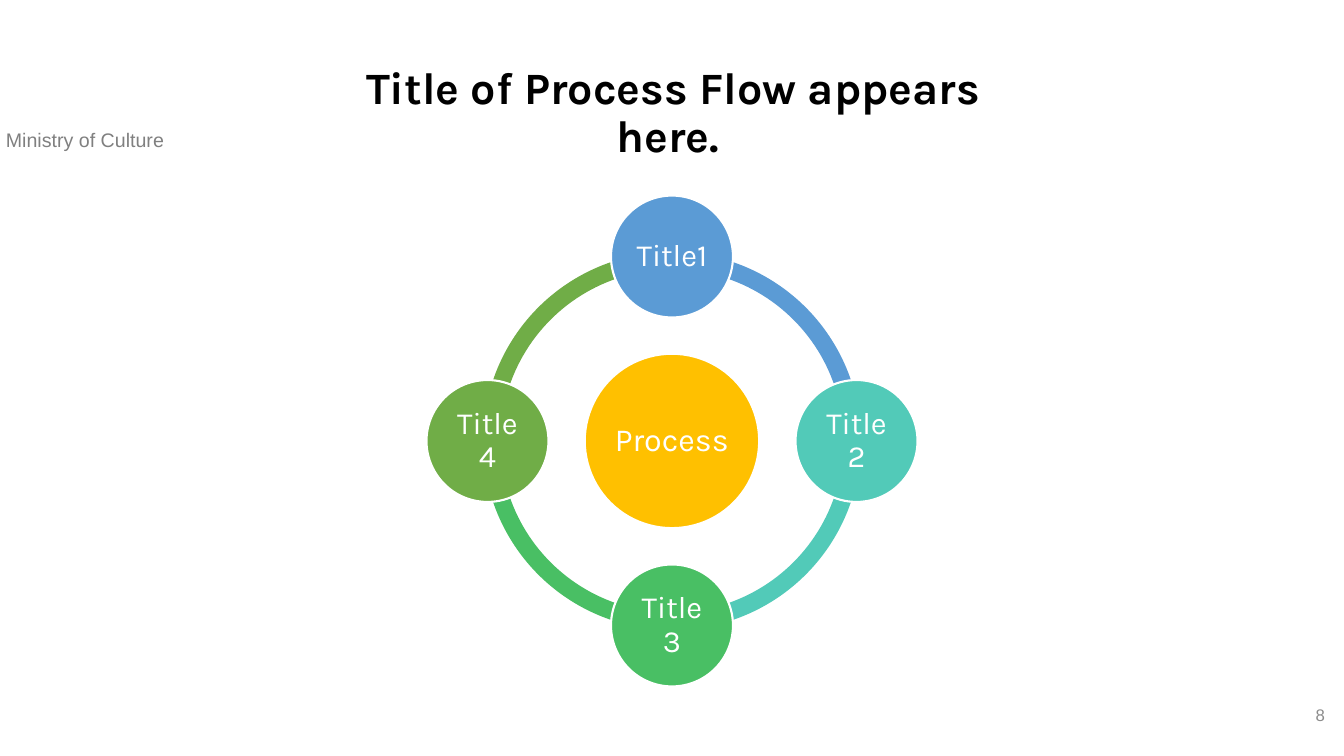
from pptx import Presentation
from pptx.dml.color import RGBColor
from pptx.enum.shapes import MSO_SHAPE
from pptx.enum.text import MSO_ANCHOR, PP_ALIGN
from pptx.util import Emu, Pt

PX = 9144  # 100 px to the inch
ARC, OVAL = MSO_SHAPE.BLOCK_ARC, MSO_SHAPE.OVAL
TOP, MIDDLE = MSO_ANCHOR.TOP, MSO_ANCHOR.MIDDLE
LEFT, CENTER, RIGHT = PP_ALIGN.LEFT, PP_ALIGN.CENTER, PP_ALIGN.RIGHT

WHITE = RGBColor(0xFF, 0xFF, 0xFF)
BLACK = RGBColor(0, 0, 0)
GREY = RGBColor(0x80, 0x80, 0x80)
LIGHT_GREY = RGBColor(0x8C, 0x8C, 0x8C)
BLUE = RGBColor(0x5B, 0x9B, 0xD5)
TEAL = RGBColor(0x52, 0xCA, 0xB8)
GREEN = RGBColor(0x49, 0xBF, 0x64)
OLIVE = RGBColor(0x70, 0xAD, 0x47)
AMBER = RGBColor(0xFF, 0xC0, 0x00)

# Ring geometry
CX, CY = 666, 437
RING_SIZE, ORBIT = 375, 183
HUB_SIZE, STEP_SIZE = 173, 121
BAND = 0.046

# Steps clockwise from the top: label, colour, direction from the centre
STEPS = [
    ("Title1", BLUE, (0, -1)),
    ("Title 2", TEAL, (1, 0)),
    ("Title 3", GREEN, (0, 1)),
    ("Title 4", OLIVE, (-1, 0)),
]

TITLE = {"name": "Karla", "size": Pt(32), "bold": True}
HUB = {"name": "Karla", "size": Pt(23)}
STEP = {"name": "Karla", "size": Pt(22)}
MINISTRY = {"name": "Arial", "size": Pt(14)}
NUMBER = {"name": "Arial", "size": Pt(12)}


def px(*values):
    return [Emu(v * PX) for v in values]


def write(sp, text, font, color, align, anchor=TOP, spacing=1.0):
    tf = sp.text_frame
    tf.word_wrap = True
    tf.vertical_anchor = anchor
    p = tf.paragraphs[0]
    p.alignment = align
    p.line_spacing = spacing
    r = p.add_run()
    r.text = text
    for key, value in font.items():
        setattr(r.font, key, value)
    r.font.color.rgb = color


def add_text(s, box, *args, **kwargs):
    write(s.shapes.add_textbox(*px(*box)), *args, **kwargs)


def add_centred(s, kind, cx, cy, size, fill):
    sp = s.shapes.add_shape(kind, *px(cx - size // 2, cy - size // 2, size, size))
    sp.shadow.inherit = False
    sp.fill.solid()
    sp.fill.fore_color.rgb = fill
    sp.line.fill.background()
    return sp


def add_arc(s, start, fill):
    # Angle adjustments count 0.6 per degree
    sp = add_centred(s, ARC, CX, CY, RING_SIZE, fill)
    for i, value in enumerate((start * 0.6, (start + 90) % 360 * 0.6, BAND)):
        sp.adjustments[i] = value


def add_circle(s, cx, cy, size, fill, text, font):
    sp = add_centred(s, OVAL, cx, cy, size, fill)
    sp.line.color.rgb = WHITE
    sp.line.width = Pt(1.5)
    for side in ("left", "right", "top", "bottom"):
        setattr(sp.text_frame, "margin_" + side, Emu(3 * PX))
    write(sp, text, font, WHITE, CENTER, MIDDLE, 0.9)


def main():
    prs = Presentation()
    prs.slide_width, prs.slide_height = px(1333, 750)
    s = prs.slides.add_slide(prs.slide_layouts[6])

    # Header and page number
    add_text(s, (-4, 122, 290, 34), "Ministry of Culture", MINISTRY, GREY, LEFT)
    add_text(s, (1024, 689, 300, 40), "8", NUMBER, LIGHT_GREY, RIGHT, MIDDLE)
    add_text(s, (328, 60, 680, 107), "Title of Process Flow appears here. ",
             TITLE, BLACK, CENTER, spacing=0.9)

    # Ring: each step colours the quarter that follows it
    for i, (_, color, _) in enumerate(STEPS):
        add_arc(s, (270 + 90 * i) % 360, color)

    # Hub and steps
    add_circle(s, CX, CY, HUB_SIZE, AMBER, "Process", HUB)
    for label, color, (dx, dy) in STEPS:
        add_circle(s, CX + dx * ORBIT, CY + dy * ORBIT, STEP_SIZE, color, label, STEP)

    prs.save("out.pptx")


if __name__ == "__main__":
    main()
